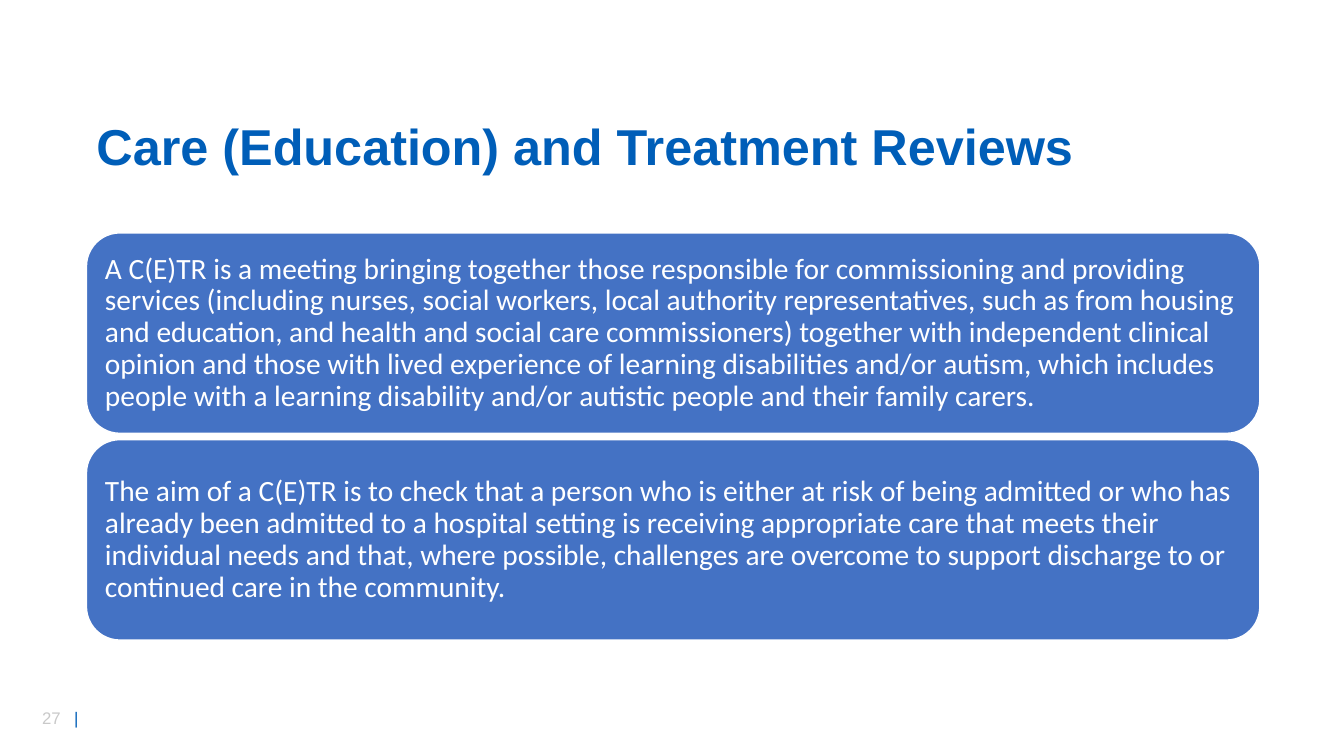
from lxml import etree
from pptx import Presentation
from pptx.dml.color import RGBColor
from pptx.enum.shapes import MSO_SHAPE
from pptx.enum.text import MSO_ANCHOR, MSO_AUTO_SIZE, PP_ALIGN
from pptx.oxml.ns import qn
from pptx.util import Cm, Pt

ROUNDED = MSO_SHAPE.ROUNDED_RECTANGLE
MIDDLE = MSO_ANCHOR.MIDDLE
TOP = MSO_ANCHOR.TOP
LEFT = PP_ALIGN.LEFT
NO_AUTOFIT = MSO_AUTO_SIZE.NONE

BRAND_BLUE = RGBColor(0x00, 0x5E, 0xB8)
PANEL_BLUE = RGBColor(0x44, 0x72, 0xC4)
NUMBER_GREY = RGBColor(0xC9, 0xC9, 0xC9)
WHITE = RGBColor(0xFF, 0xFF, 0xFF)

HEADING = "Care (Education) and Treatment Reviews"
REVIEW_POINTS = [
    "A C(E)TR is a meeting bringing together those responsible for commissioning "
    "and providing services (including nurses, social workers, local authority "
    "representatives, such as from housing and education, and health and social "
    "care commissioners) together with independent clinical opinion and those with "
    "lived experience of learning disabilities and/or autism, which includes people "
    "with a learning disability and/or autistic people and their family carers.",
    "The aim of a C(E)TR is to check that a person who is either at risk of being "
    "admitted or who has already been admitted to a hospital setting is receiving "
    "appropriate care that meets their individual needs and that, where possible, "
    "challenges are overcome to support discharge to or continued care in the "
    "community.",
]


def write(holder, text, *, size, color, font="Arial", bold=False,
          anchor=MIDDLE, line_spacing=0.9, inset=0.25):
    """Fill a shape with one formatted paragraph and return the paragraph."""
    frame = holder.text_frame
    frame.word_wrap = True
    frame.auto_size = NO_AUTOFIT
    frame.vertical_anchor = anchor
    frame.margin_left = frame.margin_right = Cm(inset)
    frame.margin_top = frame.margin_bottom = Cm(0.13)
    paragraph = frame.paragraphs[0]
    paragraph.alignment = LEFT
    paragraph.line_spacing = line_spacing
    run = paragraph.add_run()
    run.text = text
    run.font.name = font
    run.font.size = Pt(size)
    run.font.bold = bold
    run.font.color.rgb = color
    return paragraph


def add_heading(slide, left, top, width, height):
    """Place the slide title in the given box."""
    title = slide.shapes.title
    title.left, title.top = Cm(left), Cm(top)
    title.width, title.height = Cm(width), Cm(height)
    write(title, HEADING, size=36, color=BRAND_BLUE, bold=True)


def add_review_panels(slide, left, top, width, height, gap=0.16):
    """Stack one rounded panel per review point in the given box."""
    count = len(REVIEW_POINTS)
    panel_height = (height - gap * (count - 1)) / count
    for index, point in enumerate(REVIEW_POINTS):
        panel_top = top + index * (panel_height + gap)
        panel = slide.shapes.add_shape(
            ROUNDED, Cm(left), Cm(panel_top), Cm(width), Cm(panel_height))
        panel.shadow.inherit = False
        panel.fill.solid()
        panel.fill.fore_color.rgb = PANEL_BLUE
        panel.line.color.rgb = WHITE
        panel.line.width = Pt(1)
        write(panel, point, size=21, color=WHITE, font="Calibri", inset=0.22)


def add_page_number(slide, left, top, width, height, bar_offset=0.81):
    """Place the page number and its blue bar in the given box."""
    number = slide.shapes.add_textbox(Cm(left), Cm(top), Cm(width), Cm(height))
    paragraph = write(number, "27\t", size=12, color=NUMBER_GREY,
                      anchor=TOP, line_spacing=1.0)
    tabs = etree.SubElement(paragraph._p.get_or_add_pPr(), qn("a:tabLst"))
    etree.SubElement(tabs, qn("a:tab"), pos=str(Cm(bar_offset)), algn="l")
    bar = paragraph.add_run()
    bar.text = "|"
    bar.font.name = "Arial"
    bar.font.size = Pt(12)
    bar.font.color.rgb = BRAND_BLUE


def main():
    """Build and save the slide."""
    deck = Presentation()
    deck.slide_width, deck.slide_height = Cm(33.87), Cm(19.05)
    slide = deck.slides.add_slide(deck.slide_layouts[5])
    add_page_number(slide, 0.81, 17.7, 1.8, 0.76)
    add_heading(slide, 2.18, 2.9, 29.57, 1.7)
    add_review_panels(slide, 2.18, 5.87, 29.57, 10.26)
    deck.save("out.pptx")


if __name__ == "__main__":
    main()
